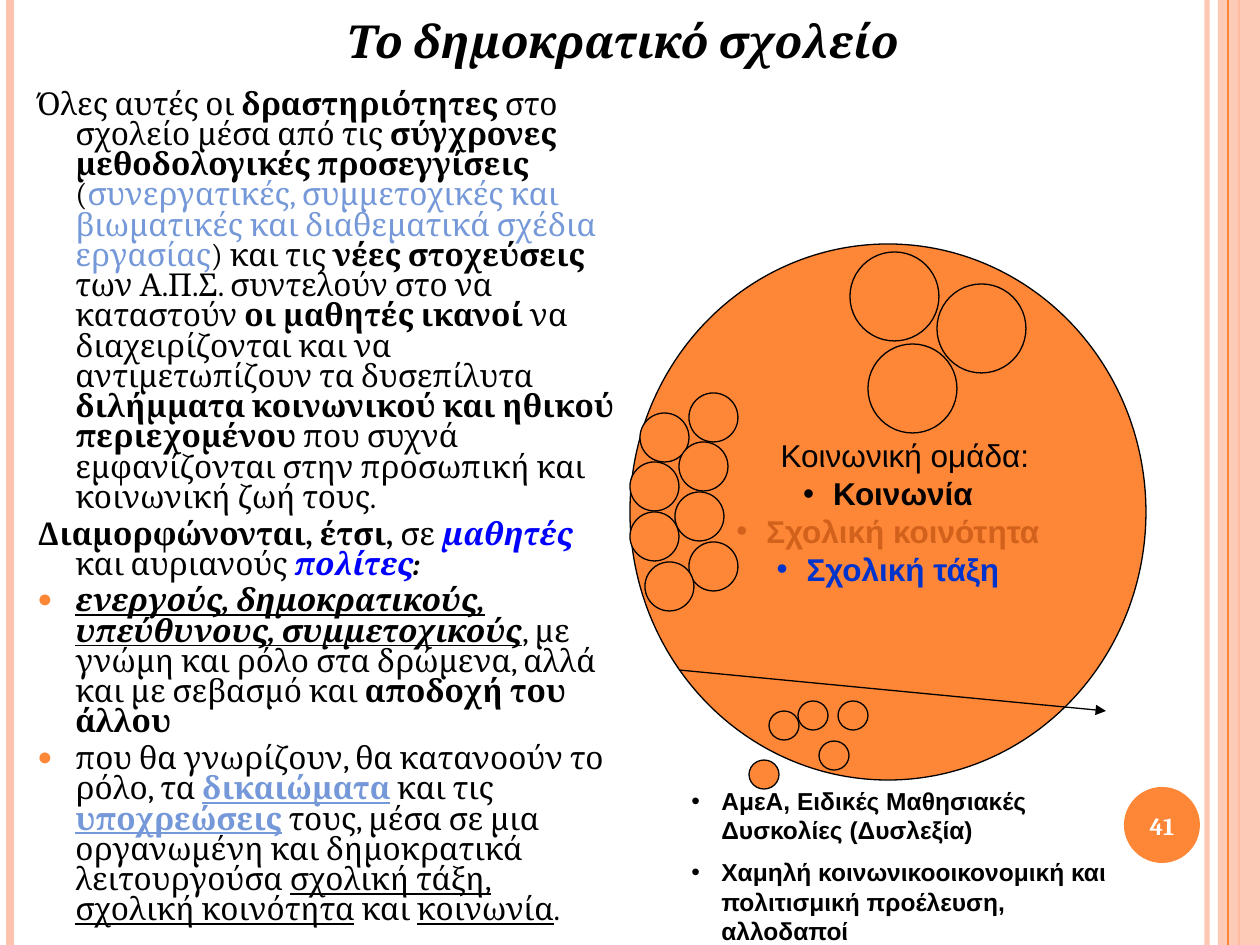
from lxml import etree
from pptx import Presentation
from pptx.dml.color import RGBColor
from pptx.enum.shapes import MSO_CONNECTOR, MSO_SHAPE
from pptx.enum.text import MSO_ANCHOR, PP_ALIGN
from pptx.oxml.ns import qn
from pptx.util import Emu, Pt

SCALE = 914400 / 126
OVAL, RECT = MSO_SHAPE.OVAL, MSO_SHAPE.RECTANGLE
STRAIGHT = MSO_CONNECTOR.STRAIGHT
LEFT, CENTER = PP_ALIGN.LEFT, PP_ALIGN.CENTER
TOP, MIDDLE, BOTTOM = MSO_ANCHOR.TOP, MSO_ANCHOR.MIDDLE, MSO_ANCHOR.BOTTOM
HUES = {"black": "000000", "white": "FFFFFF", "orange": "FE8637",
        "peach": "FEC3AE", "sky": "7598D9", "blue": "0000FF",
        "rust": "D2611C", "royal": "0033CC"}

BODY = [
    (False, [("Όλες αυτές οι ", ""), ("δραστηριότητες", "b"),
             (" στο σχολείο μέσα από τις ", ""),
             ("σύγχρονες μεθοδολογικές προσεγγίσεις", "b"), (" (", ""),
             ("συνεργατικές, συμμετοχικές και βιωματικές και "
              "διαθεματικά σχέδια εργασίας", "", "sky"),
             (") και τις ", ""), ("νέες στοχεύσεις", "b"),
             (" των Α.Π.Σ. συντελούν στο να καταστούν ", ""),
             ("οι μαθητές ικανοί", "b"),
             (" να διαχειρίζονται και να αντιμετωπίζουν τα δυσεπίλυτα ", ""),
             ("διλήμματα κοινωνικού και ηθικού περιεχομένου", "b"),
             (" που συχνά εμφανίζονται στην προσωπική και "
              "κοινωνική ζωή τους.", "")]),
    (False, [("Διαμορφώνονται, έτσι,", "b"), (" σε ", ""),
             ("μαθητές", "bi", "blue"), (" και αυριανούς ", ""),
             ("πολίτες", "bi", "blue"), (":", "bi")]),
    (True, [("ενεργούς, δημοκρατικούς, υπεύθυνους, συμμετοχικούς", "biu"),
            (", με γνώμη και ρόλο στα δρώμενα, αλλά και με σεβασμό και ", ""),
            ("αποδοχή του άλλου", "b")]),
    (True, [("που θα γνωρίζουν, θα κατανοούν το ρόλο, τα ", ""),
            ("δικαιώματα", "bu", "sky"), (" και τις ", ""),
            ("υποχρεώσεις", "bu", "sky"),
            (" τους, μέσα σε μια οργανωμένη και δημοκρατικά "
             "λειτουργούσα ", ""),
            ("σχολική τάξη,", "u"), (" ", ""), ("σχολική κοινότητα", "u"),
            (" και ", ""), ("κοινωνία", "u"), (".", "")]),
]
GROUPS = [("Κοινωνία", "black"), ("Σχολική κοινότητα", "rust"),
          ("Σχολική τάξη", "royal")]
NEEDS = ["ΑμεΑ, Ειδικές Μαθησιακές Δυσκολίες (Δυσλεξία)",
         "Χαμηλή κοινωνικοοικονομική και πολιτισμική προέλευση, αλλοδαποί"]
DOTS = [
    (49, 49, [(0, 218), (0, 268), (10, 169), (45, 248), (49, 198),
              (59, 149), (59, 298), (15, 318)]),
    (89, 89, [(220, 8), (307, 40), (238, 100)]),
    (30, 29, [(139, 467), (119, 516), (168, 457), (208, 457), (189, 497)]),
]


def px(num):
    """Turn pixels into EMU."""
    return Emu(round(num * SCALE))


def hue(name):
    """Look up a colour by name."""
    return RGBColor.from_string(HUES[name])


def fade(elem, pct):
    """Make the solid fill inside an element partly clear."""
    tone = next(elem.iter(qn("a:srgbClr")))
    etree.SubElement(tone, qn("a:alpha"), val=str(pct * 1000))


def rule(slide, start, end, color, width):
    """Draw a straight line without a shadow."""
    line = slide.shapes.add_connector(STRAIGHT, *map(px, start + end))
    line.line.color.rgb = hue(color)
    line.line.width = Pt(width)
    etree.SubElement(line._element.spPr, qn("a:effectLst"))
    return line


def form(slide, kind, box, color, edge=None):
    """Draw a filled shape with an optional outline."""
    shape = slide.shapes.add_shape(kind, *map(px, box))
    shape.shadow.inherit = False
    shape.fill.solid()
    shape.fill.fore_color.rgb = hue(color)
    if edge:
        shape.line.color.rgb = hue(edge)
        shape.line.width = Pt(0.75)
    else:
        shape.line.fill.background()
    return shape


def field(slide, box, anchor, top=6):
    """Add a wrapping text box and return its frame."""
    frame = slide.shapes.add_textbox(*map(px, box)).text_frame
    frame.word_wrap = True
    frame.vertical_anchor = anchor
    frame.margin_top = px(top)
    return frame


def write(para, parts, size, font, align=LEFT):
    """Fill a paragraph with styled runs."""
    para.alignment = align
    for text, marks, *color in parts:
        run = para.add_run()
        run.text = text
        face = run.font
        face.size, face.name = Pt(size), font
        face.bold, face.italic = "b" in marks, "i" in marks
        face.underline = "u" in marks
        face.color.rgb = hue(color[0] if color else "black")


def indent(para, left, hang=0, sign=None, color=None):
    """Set the indents of a paragraph and its bullet."""
    props = para._p.get_or_add_pPr()
    props.set("marL", str(px(left)))
    props.set("indent", str(-px(hang)))
    if color:
        tint = etree.SubElement(props, qn("a:buClr"))
        etree.SubElement(tint, qn("a:srgbClr"), val=HUES[color])
        etree.SubElement(props, qn("a:buSzPct"), val="80000")
    if sign:
        etree.SubElement(props, qn("a:buFont"), typeface="Arial")
        etree.SubElement(props, qn("a:buChar"), char=sign)
    else:
        etree.SubElement(props, qn("a:buNone"))


def lines(frame, count):
    """Return the given number of paragraphs of a frame."""
    return [frame.paragraphs[0]] + [frame.add_paragraph()
                                    for _ in range(count - 1)]


def frieze(slide, high):
    """Draw the side stripes and the page number."""
    fade(rule(slide, (1207, 0), (1207, high), "peach", 3)._element, 93)
    rule(slide, (10, 0), (10, high), "peach", 4.5)
    rule(slide, (1239, 0), (1239, high), "orange", 1.5)
    fade(form(slide, RECT, (1218, 0, 42, high), "peach")._element, 87)
    rule(slide, (1228, 0), (1228, high), "orange", 0.75)
    form(slide, OVAL, (1124, 787, 76, 76), "orange")
    frame = field(slide, (1120, 790, 84, 72), MIDDLE)
    write(frame.paragraphs[0], [("41", "b", "white")], 14, "Cambria", CENTER)


def title(slide, box):
    """Write the heading."""
    para = field(slide, box, BOTTOM).paragraphs[0]
    write(para, [("Το δημοκρατικό σχολείο", "bi")], 26, "Cambria", CENTER)


def body(slide, box):
    """Write the main text."""
    frame = field(slide, box, TOP, 15)
    for row, (para, (dot, parts)) in enumerate(zip(lines(frame, len(BODY)), BODY)):
        write(para, parts, 18, "Cambria")
        para.line_spacing = 0.8
        para.space_before = Pt(3.6 if row else 0)
        indent(para, 88, 38, *(("●", "orange") if dot else ()))


def world(slide, box):
    """Draw the large circle with its groups and arrow."""
    left, top = box[:2]
    frame = form(slide, OVAL, box, "orange", "black").text_frame
    frame.word_wrap = False
    frame.vertical_anchor = MIDDLE
    head, *rest = lines(frame, len(GROUPS) + 1)
    write(head, [("Κοινωνική ομάδα:", "")], 18, "Arial", CENTER)
    indent(head, 34)
    for para, (text, color) in zip(rest, GROUPS):
        write(para, [(text, "b", color)], 18, "Arial", CENTER)
        indent(para, 30, 30, "•")
    for wide, high, spots in DOTS:
        for x, y in spots:
            form(slide, OVAL, (left + x, top + y, wide, high), "orange", "black")
    arrow = rule(slide, (left + 49, top + 426), (left + 476, top + 467), "black", 0.75)
    etree.SubElement(arrow.line._get_or_add_ln(), qn("a:tailEnd"), type="triangle")


def needs(slide, box):
    """Write the list below the large circle."""
    frame = field(slide, box, TOP)
    for row, (para, text) in enumerate(zip(lines(frame, len(NEEDS)), NEEDS)):
        write(para, [(text, "b")], 14, "Arial")
        para.space_before = Pt(7 if row else 0)
        indent(para, 30, 30, "•")


def main():
    """Build and save the slide."""
    deck = Presentation()
    deck.slide_width, deck.slide_height = px(1260), px(945)
    slide = deck.slides.add_slide(deck.slide_layouts[6])
    frieze(slide, 945)
    title(slide, (44, 0, 1158, 74))
    body(slide, (-25, 76, 655, 794))
    world(slide, (630, 244, 516, 536))
    needs(slide, (679, 780, 456, 145))
    deck.save("out.pptx")


if __name__ == "__main__":
    main()
